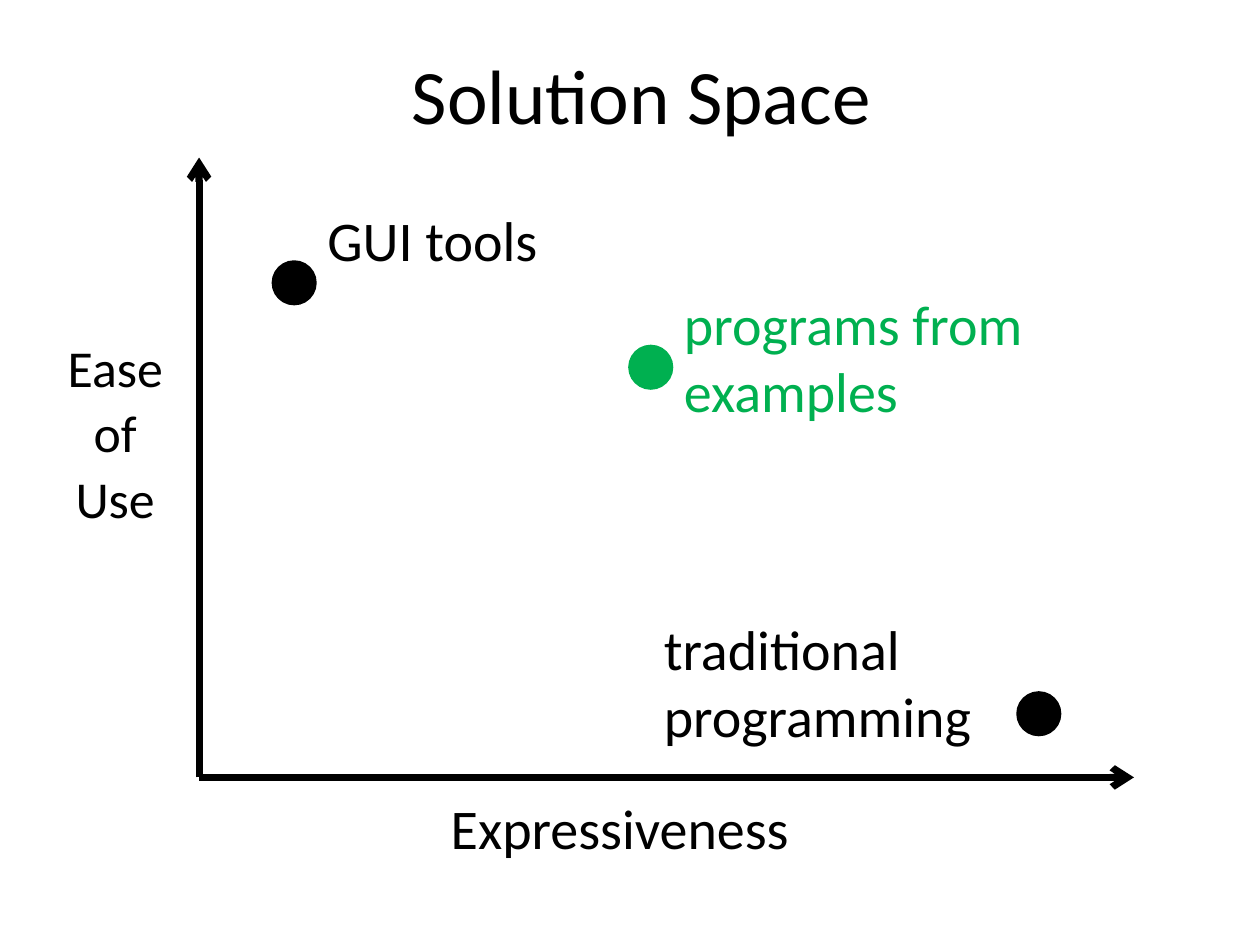
from lxml.etree import SubElement
from pptx import Presentation
from pptx.dml.color import RGBColor
from pptx.enum.shapes import MSO_CONNECTOR, MSO_SHAPE
from pptx.enum.text import PP_ALIGN
from pptx.oxml.ns import qn
from pptx.util import Inches, Pt

BLACK = "000000"
GREEN = "00B050"


def color(hex_code):
    return RGBColor.from_string(hex_code)


class SpaceSlide:
    """Draws labels, axes and points of a solution space on one slide."""

    font = "Calibri"
    axis_width = Pt(4)
    point_size = Inches(0.33)
    outline_width = Pt(2)

    def __init__(self, slide):
        self.slide = slide

    def label(self, left, top, width, height, lines, size=32, ink=BLACK,
              align=PP_ALIGN.LEFT, line_spacing=None, space_before=0):
        box = self.slide.shapes.add_textbox(
            Inches(left), Inches(top), Inches(width), Inches(height))
        frame = box.text_frame
        frame.word_wrap = True
        for index, line in enumerate(lines):
            paragraph = frame.add_paragraph() if index else frame.paragraphs[0]
            paragraph.alignment = align
            paragraph.line_spacing = line_spacing
            paragraph.space_before = Pt(space_before if index else 0)
            run = paragraph.add_run()
            run.text = line
            run.font.name = self.font
            run.font.size = Pt(size)
            run.font.color.rgb = color(ink)

    def axis(self, start, end):
        arrow = self.slide.shapes.add_connector(
            MSO_CONNECTOR.STRAIGHT, *map(Inches, start + end))
        arrow.line.color.rgb = color(BLACK)
        arrow.line.width = self.axis_width
        properties = arrow.line._get_or_add_ln()
        SubElement(properties, qn("a:tailEnd"), type="arrow")
        SubElement(properties.getparent(), qn("a:effectLst"))

    def point(self, left, top, ink=BLACK):
        dot = self.slide.shapes.add_shape(
            MSO_SHAPE.OVAL, Inches(left), Inches(top),
            self.point_size, self.point_size)
        dot.shadow.inherit = False
        dot.fill.solid()
        dot.fill.fore_color.rgb = color(ink)
        dot.line.color.rgb = color(ink)
        dot.line.width = self.outline_width


def main():
    deck = Presentation()
    deck.slide_width, deck.slide_height = Inches(10), Inches(7.5)
    space = SpaceSlide(deck.slides.add_slide(deck.slide_layouts[6]))

    space.label(3.17, 0.33, 4.08, 0.84, ["Solution Space"], size=44)
    space.label(3.42, 6.25, 3, 0.83, ["Expressiveness"],
                align=PP_ALIGN.CENTER)
    space.label(0.25, 2.67, 1.33, 1.67, ["Ease", "of", "Use"], size=29.6,
                align=PP_ALIGN.CENTER, line_spacing=0.9, space_before=5.5)

    origin = (1.58, 6.17)
    for axis_end in ((1.58, 1.25), (9, 6.17)):
        space.axis(origin, axis_end)

    space.point(2.17, 2.08)
    space.label(2.5, 1.58, 2, 0.64, ["GUI tools"])
    space.point(5, 2.75, GREEN)
    space.label(5.33, 2.25, 3.08, 1.18, ["programs from", "examples"],
                ink=GREEN)
    space.point(8.08, 5.5)
    space.label(5.17, 4.83, 3.08, 1.18, ["traditional programming"])

    deck.save("out.pptx")


if __name__ == "__main__":
    main()
